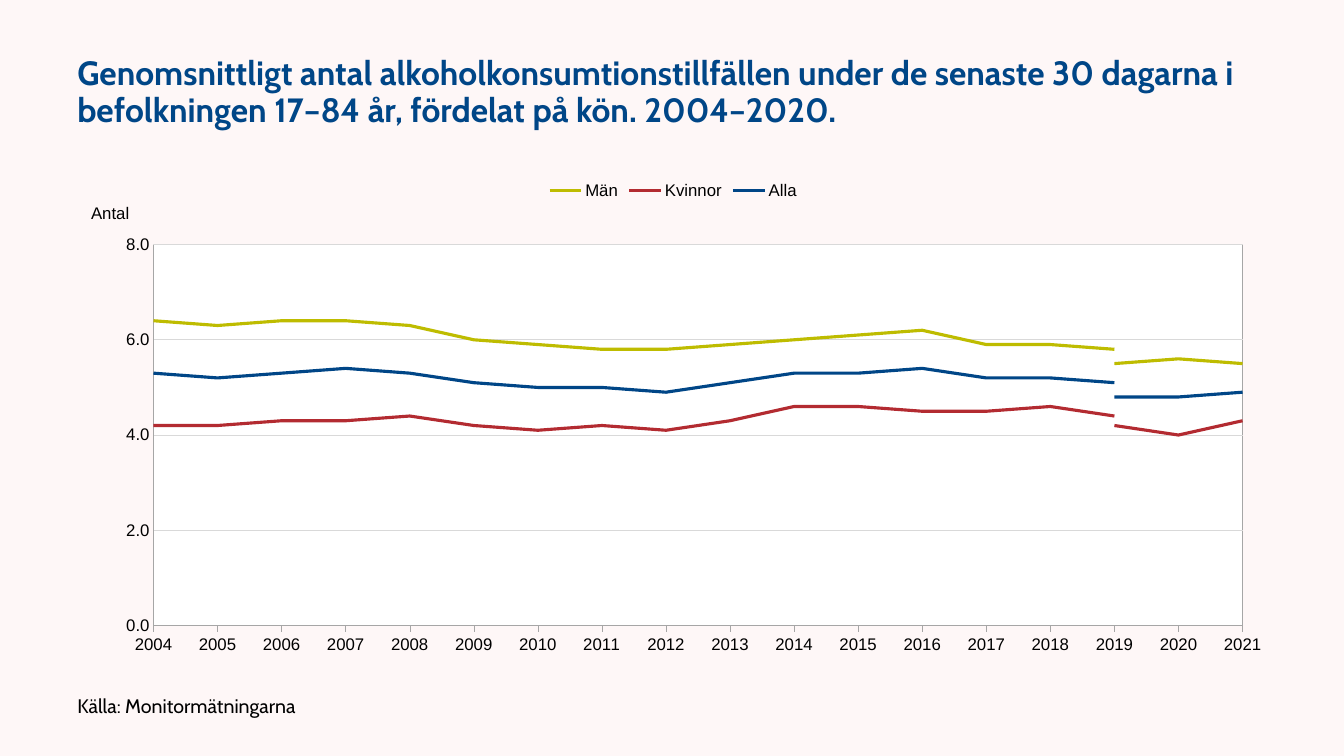
from pptx import Presentation
from pptx.chart.data import CategoryChartData
from pptx.dml.color import RGBColor
from pptx.enum.chart import XL_CHART_TYPE, XL_LEGEND_POSITION, XL_TICK_MARK
from pptx.enum.text import MSO_ANCHOR
from pptx.oxml import parse_xml
from pptx.oxml.ns import nsdecls
from pptx.util import Cm, Pt

LINE = XL_CHART_TYPE.LINE
TOP = XL_LEGEND_POSITION.TOP
OUT, NONE = XL_TICK_MARK.OUTSIDE, XL_TICK_MARK.NONE
MIDDLE = MSO_ANCHOR.MIDDLE

BLUE, BLACK, GREY = "004687", "000000", "A6A6A6"
YEARS = range(2004, 2022)
BREAK = 2019  # the year where each line starts anew

# Name, colour, values up to the break, values from the break
GROUPS = [
    ("Män", "BEBC00",
     [6.4, 6.3, 6.4, 6.4, 6.3, 6, 5.9, 5.8, 5.8, 5.9, 6, 6.1, 6.2, 5.9, 5.9, 5.8],
     [5.5, 5.6, 5.5]),
    ("Kvinnor", "B32B31",
     [4.2, 4.2, 4.3, 4.3, 4.4, 4.2, 4.1, 4.2, 4.1, 4.3, 4.6, 4.6, 4.5, 4.5, 4.6, 4.4],
     [4.2, 4, 4.3]),
    ("Alla", BLUE,
     [5.3, 5.2, 5.3, 5.4, 5.3, 5.1, 5, 5, 4.9, 5.1, 5.3, 5.3, 5.4, 5.2, 5.2, 5.1],
     [4.8, 4.8, 4.9]),
]


def rgb(code):
    return RGBColor.from_string(code)


def style(font, size, color, name, bold=False):
    font.size, font.name, font.bold = Pt(size), name, bold
    font.color.rgb = rgb(color)


def stroke(line, color, width):
    line.color.rgb = rgb(color)
    line.width = Pt(width)


def add_text(slide, box, text, size, color, bold=False):
    frame = slide.shapes.add_textbox(*map(Cm, box)).text_frame
    frame.word_wrap = True
    frame.vertical_anchor = MIDDLE
    para = frame.paragraphs[0]
    para.line_spacing = 0.9
    run = para.add_run()
    run.text = text
    style(run.font, size, color, "Cabin", bold)


def place(parent, index, **spots):
    """Give a chart part a manual layout, in fractions of the chart."""
    for old in parent.xpath("c:layout"):
        parent.remove(old)
    inner = '<c:layoutTarget val="inner"/>' if "w" in spots else ""
    modes = "".join(f'<c:{key}Mode val="edge"/>' for key in "xy")
    sizes = "".join(f'<c:{key} val="{val}"/>' for key, val in spots.items())
    parent.insert(index, parse_xml(
        f'<c:layout {nsdecls("c")}><c:manualLayout>{inner}{modes}{sizes}'
        '</c:manualLayout></c:layout>'))


def chart_data():
    data = CategoryChartData(number_format="0.0")
    data.categories = [str(year) for year in YEARS]
    for name, _, early, late in GROUPS:
        data.add_series(name, early + [None] * (len(YEARS) - len(early)))
        data.add_series(f"{name} från {BREAK}",
                        [None] * (len(YEARS) - len(late)) + late)
    return data


def style_axes(chart):
    years, count = chart.category_axis, chart.value_axis
    for axis, tick in ((years, OUT), (count, NONE)):
        axis.major_tick_mark, axis.minor_tick_mark = tick, NONE
        stroke(axis.format.line, GREY, 0.25)
        style(axis.tick_labels.font, 12, BLACK, "Arial")
    count.minimum_scale, count.maximum_scale, count.major_unit = 0, 8, 2
    count.tick_labels.number_format = "0.0"
    count.tick_labels.number_format_is_linked = False
    stroke(count.major_gridlines.format.line, "D9D9D9", 0.75)

    # Level axis title above the scale
    run = count.axis_title.text_frame.paragraphs[0].add_run()
    run.text = "Antal"
    style(run.font, 12, BLACK, "Arial")
    title = chart.element.xpath("//c:valAx/c:title")[0]
    title.xpath(".//a:bodyPr")[0].set("rot", "0")
    place(title, 1, x=0.017, y=0.06)

    # Lines run from edge to edge
    cross = chart.element.xpath("//c:valAx/c:crossAx | //c:valAx/c:crosses")[-1]
    cross.addnext(parse_xml(f'<c:crossBetween {nsdecls("c")} val="midCat"/>'))


def style_legend(chart):
    chart.has_legend = True
    legend = chart.legend
    legend.position, legend.include_in_layout = TOP, False
    style(legend.font, 12, BLACK, "Arial")
    root = chart.element.xpath("//c:legend")[0]
    for pos in range(len(GROUPS)):
        root.insert(1 + pos, parse_xml(
            f'<c:legendEntry {nsdecls("c")}><c:idx val="{2 * pos + 1}"/>'
            '<c:delete val="1"/></c:legendEntry>'))


def add_lines(slide, box):
    chart = slide.shapes.add_chart(LINE, *map(Cm, box), chart_data()).chart
    chart.has_title = False
    style(chart.font, 12, BLACK, "Arial")
    for pos, series in enumerate(chart.plots[0].series):
        series.smooth = False
        stroke(series.format.line, GROUPS[pos // 2][1], 2.25)
    style_axes(chart)
    style_legend(chart)

    # White plot area with a thin frame
    area = chart.element.xpath("//c:plotArea")[0]
    place(area, 0, x=0.071, y=0.149, w=0.899, h=0.764)
    area.append(parse_xml(
        f'<c:spPr {nsdecls("c", "a")}>'
        '<a:solidFill><a:srgbClr val="FFFFFF"/></a:solidFill>'
        f'<a:ln w="3175"><a:solidFill><a:srgbClr val="{GREY}"/></a:solidFill></a:ln>'
        '</c:spPr>'))


def main():
    deck = Presentation()
    deck.slide_width, deck.slide_height = Cm(33.87), Cm(19.05)
    slide = deck.slides.add_slide(deck.slide_layouts[6])
    slide.background.fill.solid()
    slide.background.fill.fore_color.rgb = rgb("FEF7F7")

    # Heading, chart, source
    add_text(slide, (1.7, 0.76, 30.48, 3.18),
             "Genomsnittligt antal alkoholkonsumtionstillfällen under de senaste "
             "30 dagarna i befolkningen 17–84 år, fördelat på kön. 2004–2020.",
             24, BLUE, bold=True)
    add_lines(slide, (1.7, 4.29, 30.53, 12.57))
    add_text(slide, (1.7, 17.35, 15.24, 0.94),
             "Källa: Monitormätningarna", 14, BLACK)
    deck.save("out.pptx")


if __name__ == "__main__":
    main()
